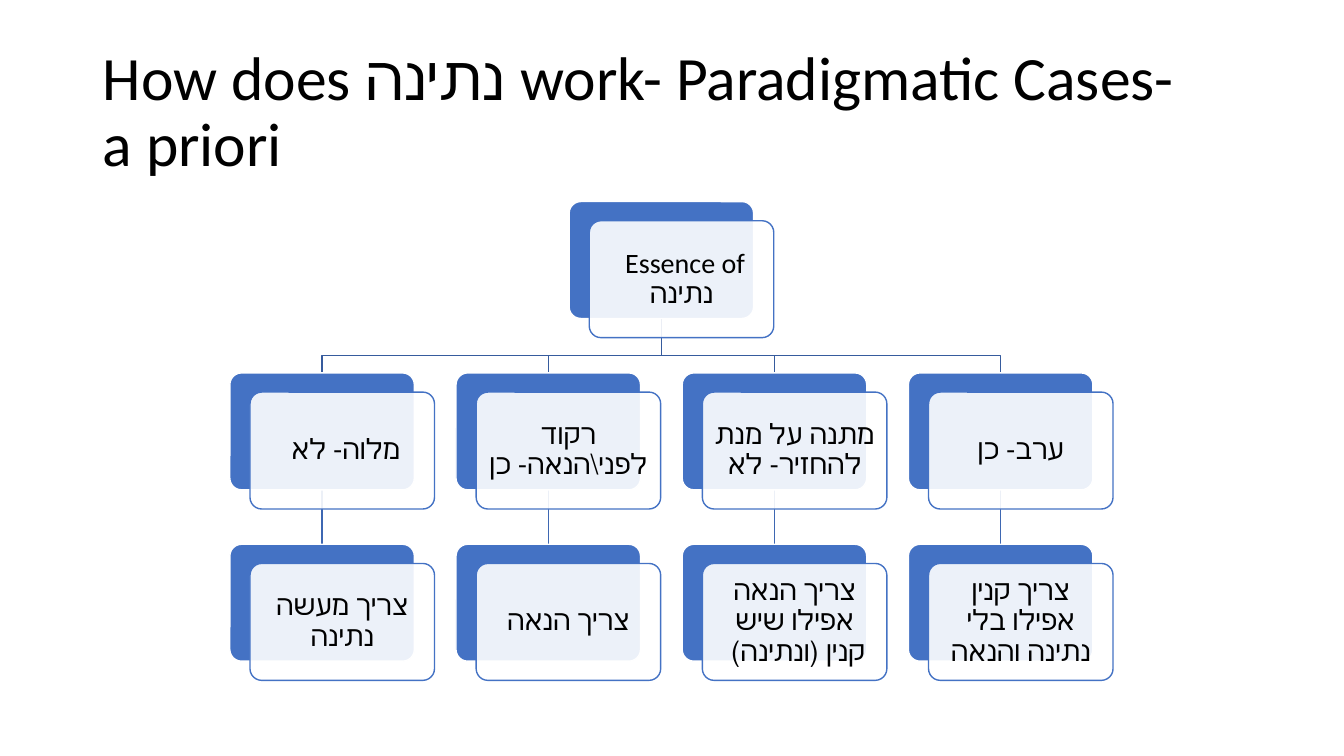
from lxml import etree
from pptx import Presentation
from pptx.dml.color import RGBColor
from pptx.enum.shapes import MSO_CONNECTOR, MSO_SHAPE
from pptx.enum.text import MSO_ANCHOR, PP_ALIGN
from pptx.oxml.ns import qn
from pptx.util import Inches, Pt

ROUNDED = MSO_SHAPE.ROUNDED_RECTANGLE
STRAIGHT = MSO_CONNECTOR.STRAIGHT
MIDDLE = MSO_ANCHOR.MIDDLE
LEFT, CENTER = PP_ALIGN.LEFT, PP_ALIGN.CENTER

THEME = {
    "font": "Calibri",
    "text": RGBColor.from_string("000000"),
    "accent": RGBColor.from_string("4472C4"),
    "white": RGBColor.from_string("FFFFFF"),
    "branch": RGBColor.from_string("365B9D"),
    "stem": RGBColor.from_string("3E67B2"),
    "title_size": Pt(44),
    "card_size": Pt(20),
    "line_width": Pt(1),
}

CARD_WIDTH, CARD_HEIGHT = 1.83, 1.16
OFFSET_X, OFFSET_Y = 0.2, 0.19
FIRST_LEFT, LAST_LEFT = 2.28, 9.01
ROOT_TOP, CASE_TOP, NEED_TOP = 2.0, 3.7, 5.4
BRANCH_Y = 3.53

ROOT_TEXT = "Essence of \nנתינה"
COLUMNS = [
    ("מלוה- לא ", "צריך מעשה נתינה"),
    ("רקוד לפני\\הנאה- כן", "צריך הנאה"),
    ("מתנה על מנת להחזיר- לא", "צריך הנאה\nאפילו שיש קנין (ונתינה) "),
    ("ערב- כן", "צריך קנין\nאפילו בלי נתינה והנאה"),
]


def write_text(shape, text, size, alignment):
    frame = shape.text_frame
    frame.word_wrap = True
    frame.vertical_anchor = MIDDLE
    paragraph = frame.paragraphs[0]
    paragraph.text = text
    paragraph.alignment = alignment
    paragraph.line_spacing = 0.9
    for run in paragraph.runs:
        run.font.name = THEME["font"]
        run.font.size = size
        run.font.color.rgb = THEME["text"]
    return paragraph


def add_card(left, top, text):
    layers = [
        (left, top, THEME["accent"], THEME["white"]),
        (left + OFFSET_X, top + OFFSET_Y, THEME["white"], THEME["accent"]),
    ]
    for layer_left, layer_top, fill, line in layers:
        card = slide.shapes.add_shape(
            ROUNDED, Inches(layer_left), Inches(layer_top), Inches(CARD_WIDTH), Inches(CARD_HEIGHT)
        )
        card.shadow.inherit = False
        card.adjustments[0] = 0.1
        card.fill.solid()
        card.fill.fore_color.rgb = fill
        card.line.color.rgb = line
        card.line.width = THEME["line_width"]
    color = card._element.spPr.find(qn("a:solidFill"))[0]
    etree.SubElement(color, qn("a:alpha")).set("val", "90000")
    for side in ("left", "top", "right", "bottom"):
        setattr(card.text_frame, f"margin_{side}", Inches(0.08))
    paragraph = write_text(card, text, THEME["card_size"], CENTER)
    paragraph.space_after = Pt(7)
    paragraph._p.get_or_add_pPr().set("rtl", "1")


presentation = Presentation()
presentation.slide_width = Inches(13.33)
presentation.slide_height = Inches(7.5)
slide = presentation.slides.add_slide(presentation.slide_layouts[6])

title = slide.shapes.add_textbox(Inches(0.92), Inches(0.4), Inches(11.5), Inches(1.45))
write_text(title, "How does נתינה work- Paradigmatic Cases- \na priori", THEME["title_size"], LEFT)

column_pitch = (LAST_LEFT - FIRST_LEFT) / (len(COLUMNS) - 1)
column_lefts = [FIRST_LEFT + column_pitch * index for index in range(len(COLUMNS))]
root_left = (FIRST_LEFT + LAST_LEFT) / 2
root_center = root_left + CARD_WIDTH / 2

for left in reversed(column_lefts):
    center = left + CARD_WIDTH / 2
    stem = slide.shapes.add_connector(
        STRAIGHT, Inches(center), Inches(CASE_TOP + CARD_HEIGHT), Inches(center), Inches(NEED_TOP)
    )
    stem.line.color.rgb = THEME["stem"]
    stem.line.width = THEME["line_width"]
    etree.SubElement(stem._element.spPr, qn("a:effectLst"))

    outline = slide.shapes.build_freeform(Inches(root_center), Inches(ROOT_TOP + CARD_HEIGHT))
    corners = [(root_center, BRANCH_Y), (center, BRANCH_Y), (center, CASE_TOP)]
    outline.add_line_segments([(Inches(x), Inches(y)) for x, y in corners], close=False)
    branch = outline.convert_to_shape()
    branch.shadow.inherit = False
    branch.fill.background()
    branch.line.color.rgb = THEME["branch"]
    branch.line.width = THEME["line_width"]

add_card(root_left, ROOT_TOP, ROOT_TEXT)
for left, (case, need) in zip(column_lefts, COLUMNS):
    add_card(left, CASE_TOP, case)
    add_card(left, NEED_TOP, need)

presentation.save("out.pptx")
